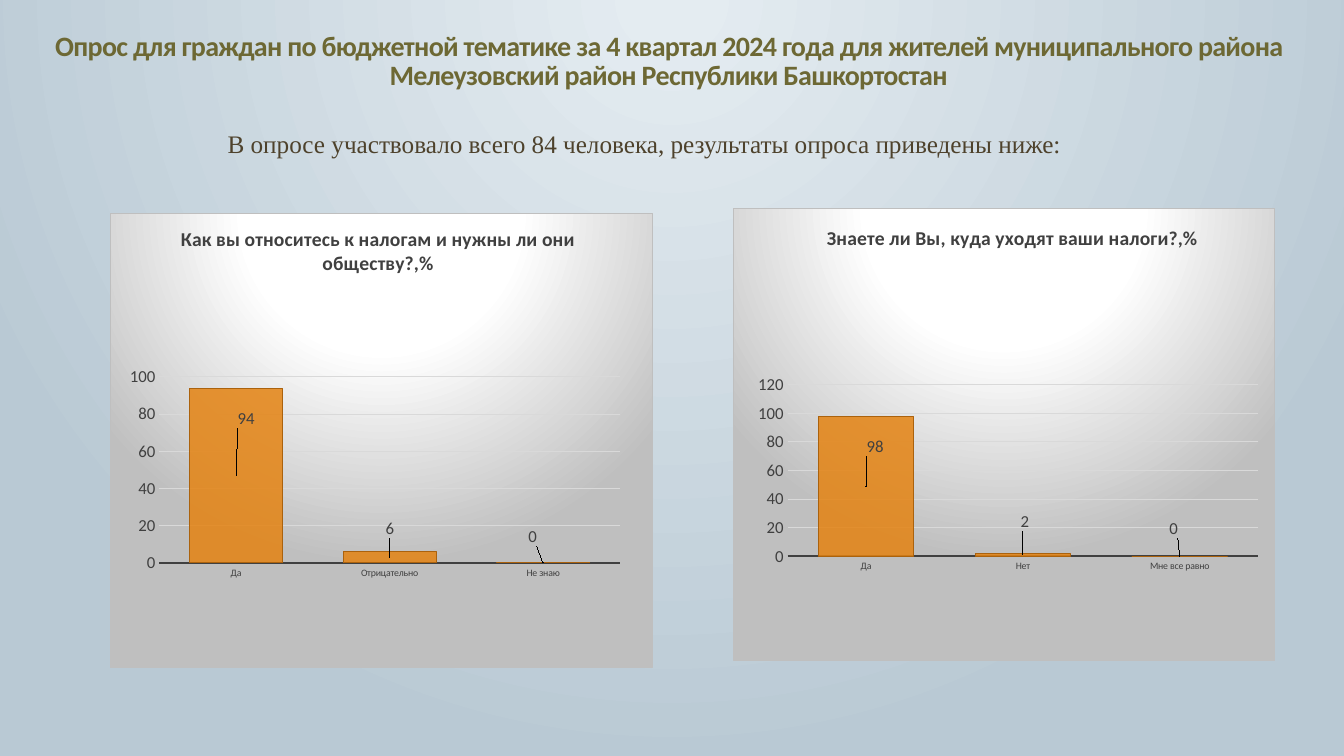
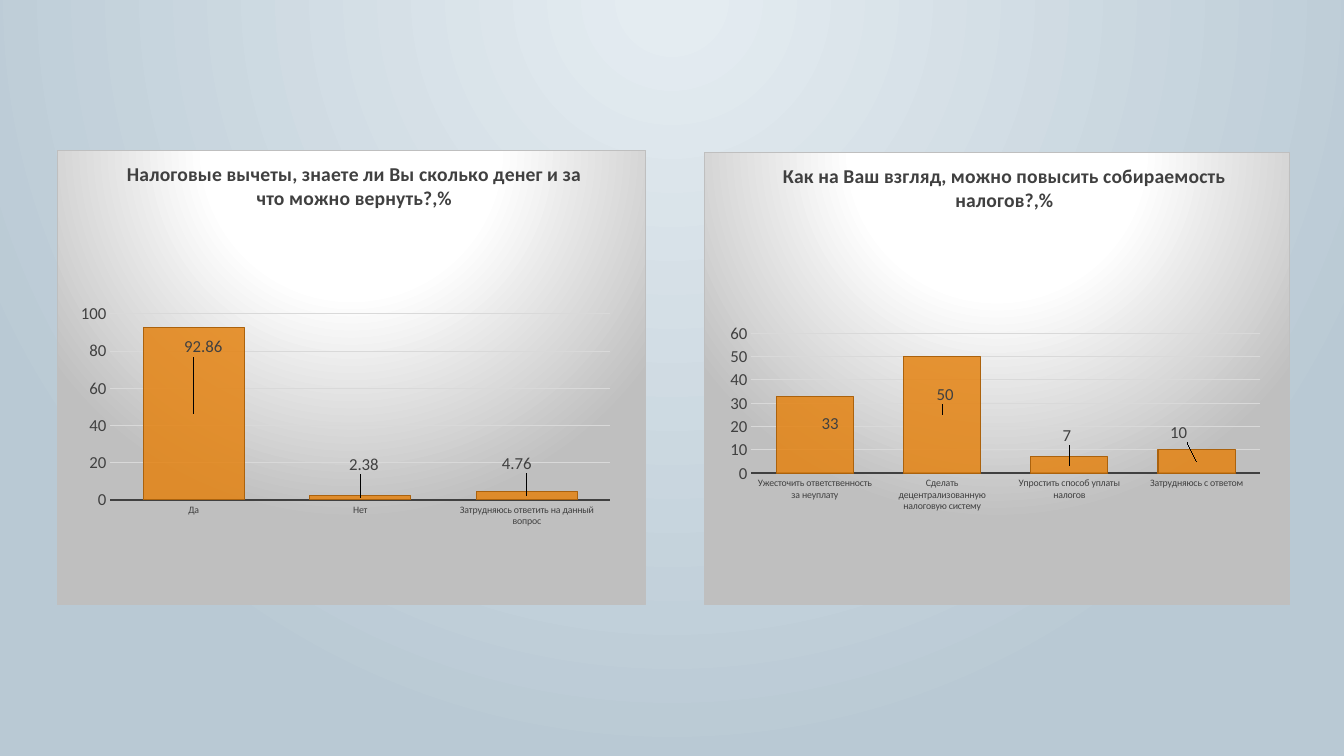
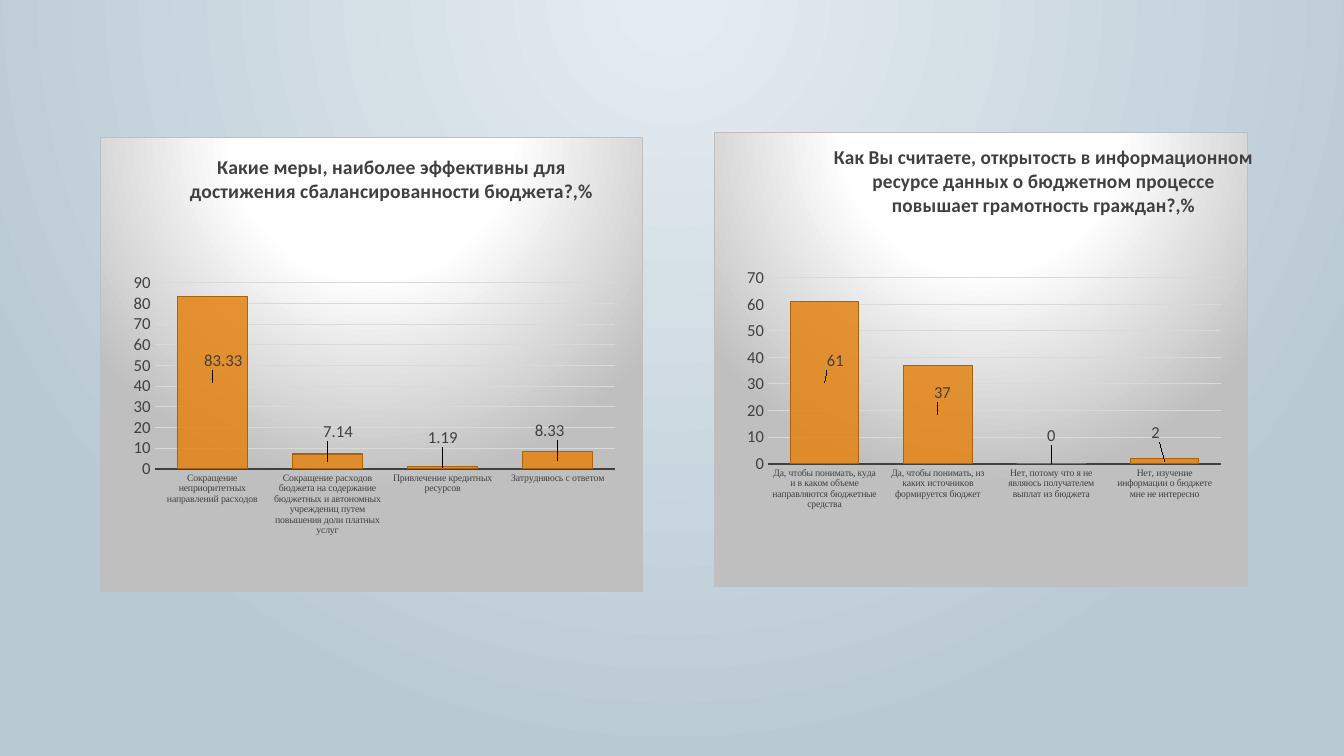
import dataclasses

import pptx
import pptx.chart.data
import pptx.dml.color
import pptx.enum.chart
import pptx.enum.text
import pptx.oxml
import pptx.oxml.ns
import pptx.util

SCALE = 914400 / 100.8  # EMU in one px
KIND = pptx.enum.chart.XL_CHART_TYPE


@dataclasses.dataclass(frozen=True)
class Theme:
    sans: str = "Calibri"
    serif: str = "Times New Roman"
    title: str = "6D6834"
    intro: str = "4E422C"
    ink: str = "404040"
    grid: str = "D9D9D9"
    edge: str = "BFBFBF"
    bar: str = "E48312"
    rim: str = "AB620D"
    head: int = 20
    lead: int = 18
    ask: int = 14
    mark: int = 12
    tick: int = 7
    sky: tuple = ((3, "E4ECF1"), (100, "B9C9D4"))
    glow: tuple = ((0, "FFFFFF"), (39, "FFFFFF"), (100, "BFBFBF"))


T = Theme()


# Shared helpers

def px(n):
    return pptx.util.Emu(round(n * SCALE))


def rgb(code):
    return pptx.dml.color.RGBColor.from_string(code)


def xml(text):
    head, tail = text.split(">", 1)
    names = pptx.oxml.ns.nsdecls("a", "c")
    slash = "/" if head.endswith("/") else ""
    return pptx.oxml.parse_xml(f"{head.rstrip('/')} {names}{slash}>{tail}")


def style(font, size, color, face=T.sans, bold=False):
    font.size = pptx.util.Pt(size)
    font.color.rgb = rgb(color)
    font.name = face
    font.bold = bold


def write(frame, text, size, color, face=T.sans, bold=False, lines=None, track=None):
    para = frame.paragraphs[0]
    para.alignment = pptx.enum.text.PP_ALIGN.CENTER
    if lines:
        para.line_spacing = lines
    run = para.add_run()
    run.text = text
    style(run.font, size, color, face, bold)
    if track:
        run.font._element.set("spc", str(track))


def radial(stops, left, top, right, bottom):
    marks = "".join(f'<a:gs pos="{pos * 1000}"><a:srgbClr val="{code}"/></a:gs>'
                    for pos, code in stops)
    sides = zip("ltrb", (left, top, right, bottom))
    rect = " ".join(f'{side}="{val * 1000}"' for side, val in sides)
    return (f'<a:gradFill rotWithShape="1"><a:gsLst>{marks}</a:gsLst>'
            f'<a:path path="circle"><a:fillToRect {rect}/></a:path></a:gradFill>')


def layout(node, index, x, y, size=None):
    """Put a manual layout, in shares of the chart, at the index in the node."""
    for old in node.xpath("c:layout"):
        node.remove(old)
    parts = []
    if size:
        parts.append('<c:layoutTarget val="inner"/>')
    if size or node.tag.endswith("title"):
        parts.append('<c:xMode val="edge"/><c:yMode val="edge"/>')
    vals = [("x", x), ("y", y)] + list(zip("wh", size or ()))
    parts += [f'<c:{name} val="{val:.4f}"/>' for name, val in vals]
    node.insert(index, xml("<c:layout><c:manualLayout>" + "".join(parts)
                           + "</c:manualLayout></c:layout>"))


def backdrop(deck):
    master = deck.slide_master
    master.background.fill.solid()
    box = master.element.xpath(".//p:bgPr")[0]
    box.replace(box[0], xml(radial(T.sky, 43, 0, 43, 100)))


# Chart panel

def axes(chart, top, step, face):
    cat, val = chart.category_axis, chart.value_axis
    for axis in (cat, val):
        axis.major_tick_mark = axis.minor_tick_mark = pptx.enum.chart.XL_TICK_MARK.NONE
    cat.format.line.color.rgb = rgb(T.ink)
    cat.format.line.width = pptx.util.Pt(1.5)
    style(cat.tick_labels.font, T.tick, T.ink, face)
    val.minimum_scale, val.maximum_scale, val.major_unit = 0, top, step
    val.format.line.fill.background()
    val.has_major_gridlines = True
    rule = val.major_gridlines.format.line
    rule.color.rgb = rgb(T.grid)
    rule.width = pptx.util.Pt(0.75)
    style(val.tick_labels.font, T.mark, T.ink)


def bars(chart, plot):
    plot.gap_width = 65
    plot.vary_by_categories = False
    row = plot.series[0]
    row.format.fill.solid()
    row.format.fill.fore_color.rgb = rgb(T.bar)
    fill = chart.element.xpath(".//c:ser/c:spPr/a:solidFill/a:srgbClr")[0]
    fill.append(xml('<a:alpha val="85000"/>'))
    row.format.line.color.rgb = rgb(T.rim)
    row.format.line.width = pptx.util.Pt(0.75)
    return row


def labels(chart, row, box, area, top, spots):
    """Move each label from the middle of its bar to its spot in the box."""
    _, _, wide, high = box
    x, y, w, h = area
    style(row.data_labels.font, T.mark, T.ink)
    row.data_labels.show_value = True
    for i in range(len(spots)):
        tag = row.points[i].data_label
        style(tag.font, T.mark, T.ink)
        tag.position = pptx.enum.chart.XL_LABEL_POSITION.CENTER
    nodes = chart.element.xpath(".//c:dLbl")
    for i, (node, spot, val) in enumerate(zip(nodes, spots, row.values)):
        mid = x + w * (i + 0.5) / len(spots)
        level = y + h * (1 - val / top / 2)
        layout(node, 1, spot[0] / wide - mid, spot[1] / high - level)


def panel(slide, box, ask, at, cats, vals, spots, area, top, step,
          kind=KIND.COLUMN_CLUSTERED, face=T.sans):
    data = pptx.chart.data.CategoryChartData()
    data.categories = cats
    data.add_series("Series 1", vals)
    chart = slide.shapes.add_chart(kind, *map(px, box), data).chart
    style(chart.font, 10, "000000")
    chart.has_legend = False

    # Panel fill and border
    chart.element.xpath("c:chart")[0].addnext(xml(
        "<c:spPr>" + radial(T.glow, 50, -80, 50, 180)
        + f'<a:ln w="9525"><a:solidFill><a:srgbClr val="{T.edge}"/></a:solidFill></a:ln>'
        + "</c:spPr>"))

    # Question above the bars
    chart.has_title = True
    write(chart.chart_title.text_frame, ask, size=T.ask, color=T.ink, bold=True)
    chart.chart_title.include_in_layout = False
    layout(chart.element.xpath("c:chart/c:title")[0], 1, at[0] / box[2], at[1] / box[3])

    # Plot
    layout(chart.element.xpath(".//c:plotArea")[0], 0, *area[:2], size=area[2:])
    axes(chart, top, step, face)
    row = bars(chart, chart.plots[0])
    labels(chart, row, box, area, top, spots)


# Slide heading

def heading(slide, box, title, intro):
    left, top, wide, high = box
    head = slide.shapes.title
    head.left, head.top, head.width, head.height = map(px, (left, top, wide, high))
    frame = head.text_frame
    frame.word_wrap = True
    frame.auto_size = pptx.enum.text.MSO_AUTO_SIZE.NONE
    frame.vertical_anchor = pptx.enum.text.MSO_ANCHOR.BOTTOM
    write(frame, title, size=T.head, color=T.title, bold=True, lines=0.85, track=-50)
    note = slide.shapes.add_textbox(*map(px, (left + 138, top + 107, 953, 40)))
    note.text_frame.word_wrap = True
    write(note.text_frame, intro, size=T.lead, color=T.intro, face=T.serif)


WIDE = (0.09, 0.36, 0.85, 0.41)
STACK = dict(area=(0.1, 0.32, 0.85, 0.41), step=10,
             kind=KIND.COLUMN_STACKED, face=T.serif)

TAXES = [
    dict(box=(110, 213, 543, 455), at=(67, 8),
         ask="Как вы относитесь к налогам и нужны ли они обществу?,%",
         cats=["Да", "Отрицательно", "Не знаю"], vals=[94, 6, 0],
         spots=[(136, 206), (280, 316), (423, 324)],
         area=WIDE, top=100, step=20),
    dict(box=(733, 208, 542, 453), at=(90, 12),
         ask="Знаете ли Вы, куда уходят ваши налоги?,%",
         cats=["Да", "Нет", "Мне все равно"], vals=[98, 2, 0],
         spots=[(142, 239), (292, 314), (441, 321)],
         area=(0.1, 0.39, 0.87, 0.38), top=120, step=20),
]
REFUNDS = [
    dict(box=(57, 150, 589, 455), at=(66, 6),
         ask="Налоговые вычеты, знаете ли Вы сколько денег и за что можно вернуть?,%",
         cats=["Да", "Нет", "Затрудняюсь ответить на данный вопрос"],
         vals=[92.86, 2.38, 4.76],
         spots=[(146, 197), (307, 315), (460, 314)],
         area=WIDE, top=100, step=20),
    dict(box=(704, 152, 586, 453), at=(75, 6),
         ask="Как на Ваш взгляд, можно повысить собираемость налогов?,%",
         cats=["Ужесточить ответственность за неуплату",
               "Сделать децентрализованную налоговую систему",
               "Упростить способ уплаты налогов", "Затрудняюсь с ответом"],
         vals=[33, 50, 7, 10],
         spots=[(126, 272), (241, 243), (363, 284), (475, 281)],
         area=(0.08, 0.4, 0.87, 0.31), top=60, step=10),
]
BUDGET = [
    dict(box=(714, 132, 543, 455), at=(118, 7),
         ask="Как Вы считаете, открытость в информационном ресурсе данных "
             "о бюджетном процессе повышает грамотность граждан?,%",
         cats=["Да, чтобы понимать, куда и в каком объеме направляются бюджетные средства",
               "Да, чтобы понимать, из каких источников формируется бюджет",
               "Нет, потому что я не являюсь получателем выплат из бюджета",
               "Нет, изучение информации о бюджете мне не интересно"],
         vals=[61, 37, 0, 2],
         spots=[(123, 229), (232, 261), (343, 304), (449, 301)], top=70, **STACK),
    dict(box=(100, 137, 543, 455), at=(86, 12),
         ask="Какие меры, наиболее эффективны для достижения "
             "сбалансированности бюджета?,%",
         cats=["Сокращение неприоритетных направлений расходов",
               "Сокращение расходов бюджета на содержание бюджетных и автономных "
               "учреждениц путем повышения доли платных услуг",
               "Привлечение кредитных ресурсов", "Затрудняюсь с ответом"],
         vals=[83.33, 7.14, 1.19, 8.33],
         spots=[(123, 224), (238, 295), (343, 301), (450, 294)], top=90, **STACK),
]


def main():
    deck = pptx.Presentation()
    deck.slide_width, deck.slide_height = px(1344), px(756)
    backdrop(deck)
    titled, blank = deck.slide_layouts[5], deck.slide_layouts[6]
    for base, panels in ((titled, TAXES), (blank, REFUNDS), (blank, BUDGET)):
        slide = deck.slides.add_slide(base)
        if base is titled:
            heading(slide, (30, 16, 1277, 80),
                    "Опрос для граждан по бюджетной тематике за 4 квартал 2024 года "
                    "для жителей муниципального района Мелеузовский район "
                    "Республики Башкортостан",
                    "В опросе участвовало всего 84 человека, "
                    "результаты опроса приведены ниже:")
        for item in panels:
            panel(slide, **item)
    deck.save("out.pptx")


if __name__ == "__main__":
    main()
